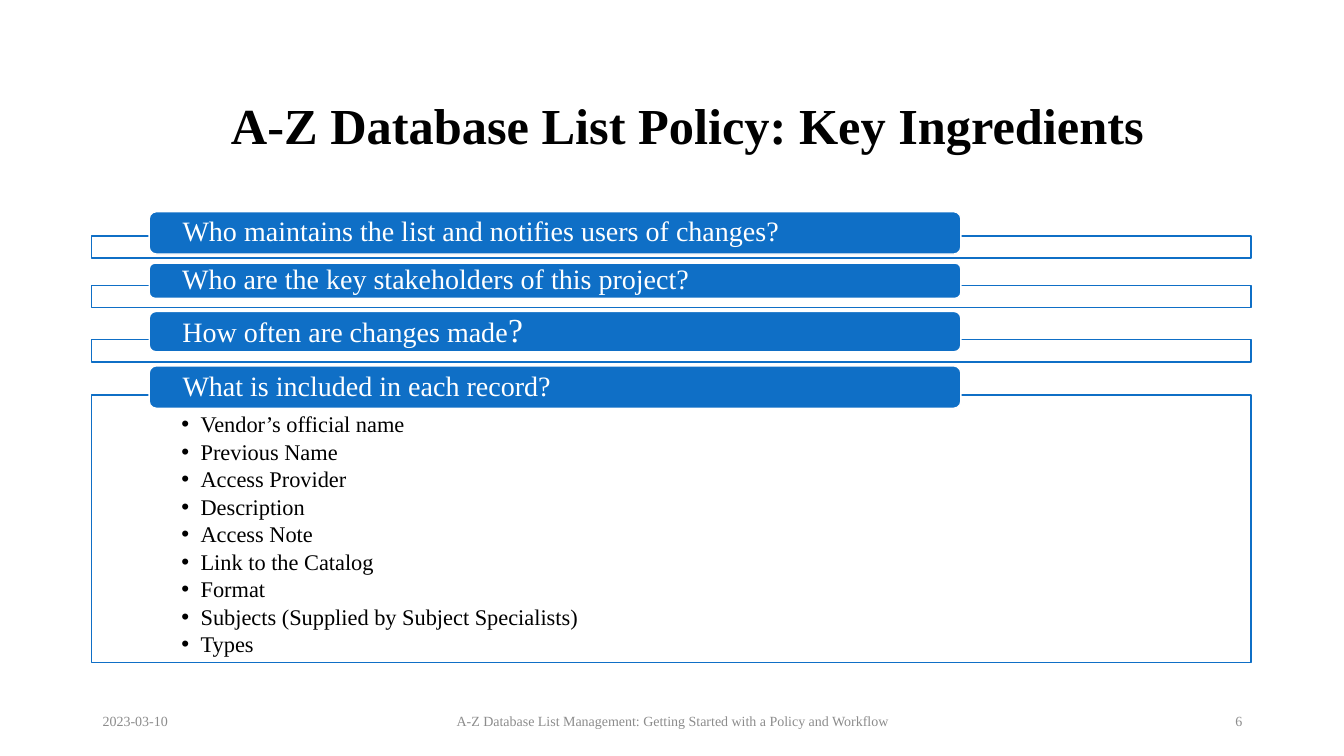
from pptx import Presentation
from pptx.dml.color import RGBColor
from pptx.enum.shapes import MSO_SHAPE as Kind
from pptx.enum.text import MSO_ANCHOR as Anchor, MSO_AUTO_SIZE as Fit, PP_ALIGN as Align
from pptx.oxml.ns import qn
from pptx.util import Inches, Pt
from lxml.etree import SubElement as Sub

BLUE = RGBColor(0x0F, 0x6F, 0xC6)
WHITE = RGBColor(255, 255, 255)
BLACK = RGBColor(0, 0, 0)
GREY = RGBColor(0x8C, 0x8C, 0x8C)

deck = Presentation()
deck.slide_width, deck.slide_height = Inches(13.33), Inches(7.5)
slide = deck.slides.add_slide(deck.slide_layouts[5])


def style(para, size, color, bold=False):
    font = para.font
    font.name, font.size, font.bold = "Times New Roman", Pt(size), bold
    font.color.rgb = color


def block(kind, left, top, width, height, fill, line):
    shape = slide.shapes.add_shape(
        kind, Inches(left), Inches(top), Inches(width), Inches(height))
    shape.shadow.inherit = False
    shape.fill.solid()
    shape.fill.fore_color.rgb = fill
    shape.line.color.rgb = line
    shape.line.width = Pt(1)
    shape.text_frame.word_wrap = True
    return shape


# Title
title = slide.shapes.title
title.left, title.top = Inches(2.19), Inches(0.69)
title.width, title.height = Inches(10.22), Inches(0.9)
frame = title.text_frame
frame.text = "A-Z Database List Policy: Key Ingredients"
frame.auto_size = Fit.NONE
frame.vertical_anchor = Anchor.BOTTOM
para = frame.paragraphs[0]
para.alignment, para.line_spacing = Align.LEFT, 0.9
style(para, 36, BLACK, True)

# Questions: panel top and height, header top and height, text, points
fields = ["Vendor’s official name", "Previous Name", "Access Provider",
          "Description", "Access Note", "Link to the Catalog", "Format",
          "Subjects (Supplied by Subject Specialists)", "Types"]
rows = [
    (2.34, 0.22, 2.1, 0.42, "Who maintains the list and notifies users of changes?", []),
    (2.83, 0.22, 2.61, 0.35, "Who are the key stakeholders of this project?", []),
    (3.37, 0.22, 3.09, 0.4, "How often are changes made", []),
    (3.92, 2.65, 3.63, 0.42, "What is included in each record?", fields),
]
for top, height, head_top, head_height, text, points in rows:
    # Panel, with its bullets if any
    panel = block(Kind.RECTANGLE, 0.91, top, 11.5, height, WHITE, BLUE)
    tint = panel.fill._xPr.find(qn("a:solidFill"))[0]
    Sub(tint, qn("a:alpha"), val="90000")
    frame = panel.text_frame
    if points:
        frame.vertical_anchor = Anchor.TOP
        frame.margin_left = frame.margin_right = Inches(0.89)
        frame.margin_top, frame.margin_bottom = Inches(0.18), Inches(0.02)
        frame.text = "\n".join(points)
        for para in frame.paragraphs:
            para.alignment, para.line_spacing = Align.LEFT, 0.9
            para.space_after = Pt(2.4)
            style(para, 16, BLACK)
            props = para._p.get_or_add_pPr()
            props.set("marL", str(Inches(0.19)))
            props.set("indent", str(Inches(-0.19)))
            Sub(props, qn("a:buFont"), typeface="Arial")
            Sub(props, qn("a:buChar"), char="•")
            props.append(props.find(qn("a:defRPr")))

    # Header
    head = block(Kind.ROUNDED_RECTANGLE, 1.48, head_top, 8.05, head_height, BLUE, WHITE)
    frame = head.text_frame
    frame.margin_left = frame.margin_right = Inches(0.31)
    frame.margin_top = frame.margin_bottom = 0
    frame.vertical_anchor = Anchor.MIDDLE
    para = frame.paragraphs[0]
    para.text = text
    para.alignment, para.line_spacing = Align.LEFT, 0.9
    style(para, 20, WHITE)
    if not text.endswith("?"):
        mark = para.add_run()
        mark.text = "?"
        mark.font.size = Pt(24)

# Footer
notes = [
    (0.92, 3, "2023-03-10", Align.LEFT),
    (4.42, 4.5, "A-Z Database List Management: Getting Started with a Policy and Workflow",
     Align.CENTER),
    (9.42, 3, "6", Align.RIGHT),
]
for left, width, text, align in notes:
    box = slide.shapes.add_textbox(Inches(left), Inches(6.95), Inches(width), Inches(0.4))
    frame = box.text_frame
    frame.word_wrap = True
    frame.vertical_anchor = Anchor.MIDDLE
    para = frame.paragraphs[0]
    para.text, para.alignment = text, align
    style(para, 10, GREY)

deck.save("out.pptx")
